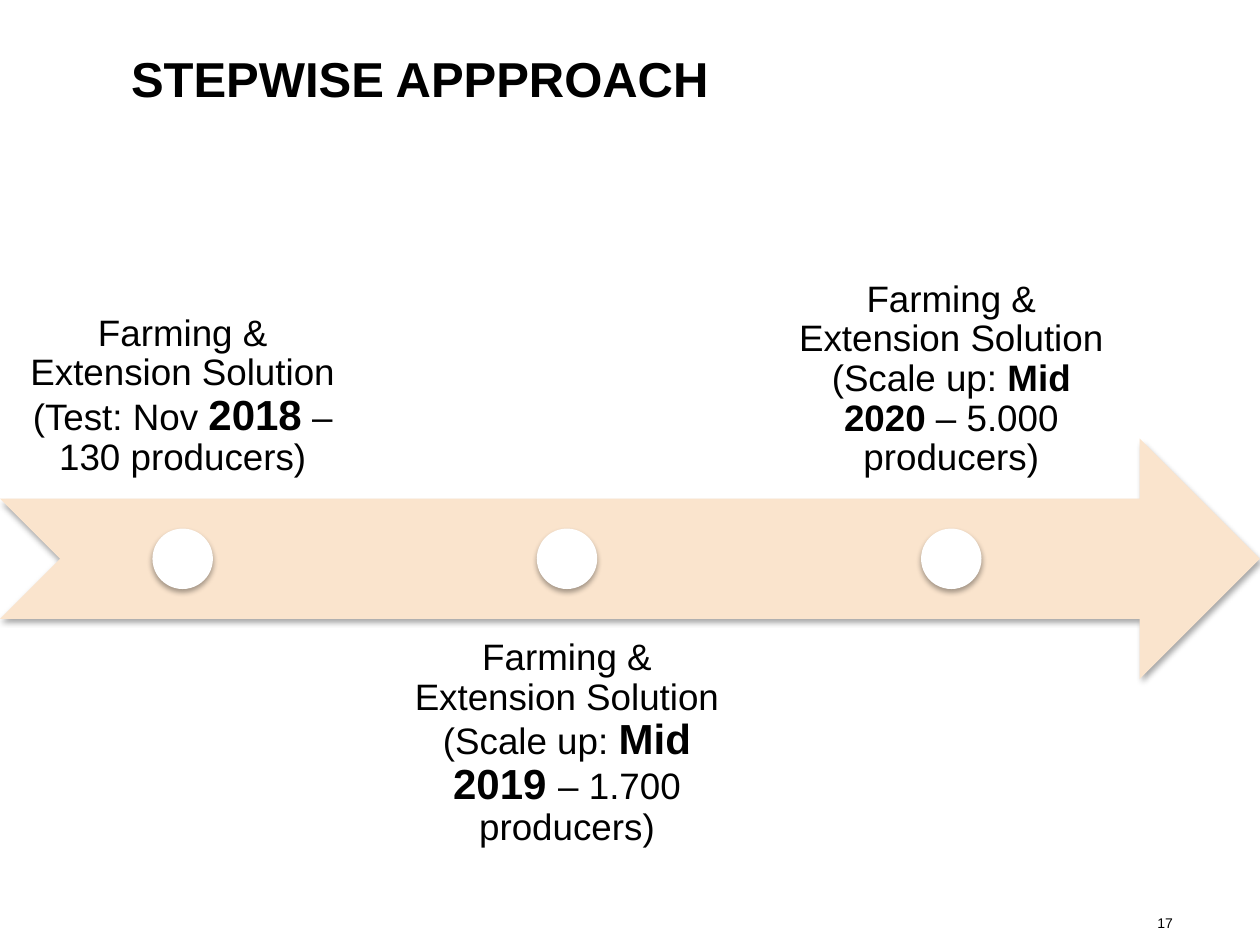
import pptx
import pptx.dml.color
import pptx.enum.shapes
import pptx.enum.text
import pptx.oxml
import pptx.oxml.ns
import pptx.util

Inches = pptx.util.Inches
Pt = pptx.util.Pt
ALIGN = pptx.enum.text.PP_ALIGN
ANCHOR = pptx.enum.text.MSO_ANCHOR
SHAPE = pptx.enum.shapes.MSO_SHAPE

SHADOW = (
    f'<a:effectLst {pptx.oxml.ns.nsdecls("a")}>'
    '<a:outerShdw blurRad="40000" dist="23000" dir="5400000" rotWithShape="0">'
    '<a:srgbClr val="000000"><a:alpha val="35000"/></a:srgbClr>'
    '</a:outerShdw></a:effectLst>'
)


def color(hex_string):
    return pptx.dml.color.RGBColor.from_string(hex_string)


class SlideBuilder:
    """Holds the style and the current slide."""

    font_name = "Arial"
    text_color = "000000"

    def __init__(self, presentation):
        self.slide = presentation.slides.add_slide(presentation.slide_layouts[5])
        self.shapes = self.slide.shapes

    def start_group(self):
        self.shapes = self.slide.shapes.add_group_shape().shapes

    def fill_text(self, shape, runs, align, anchor, insets, line_spacing=1.0):
        """Write one paragraph from (text, size, bold) runs."""
        frame = shape.text_frame
        frame_format = {
            "word_wrap": True,
            "auto_size": pptx.enum.text.MSO_AUTO_SIZE.NONE,
            "vertical_anchor": anchor,
        }
        sides = ("margin_left", "margin_top", "margin_right", "margin_bottom")
        frame_format.update(zip(sides, map(Inches, insets)))
        for name, value in frame_format.items():
            setattr(frame, name, value)

        paragraph = frame.paragraphs[0]
        paragraph.alignment = align
        paragraph.line_spacing = line_spacing
        for text, size, bold in runs:
            run = paragraph.add_run()
            run.text = text
            font_format = {"name": self.font_name, "size": Pt(size), "bold": bold}
            for name, value in font_format.items():
                setattr(run.font, name, value)
            run.font.color.rgb = color(self.text_color)
        return paragraph

    def title(self, text, left, top, width, height):
        shape = self.slide.shapes.title
        position = {"left": left, "top": top, "width": width, "height": height}
        for name, value in position.items():
            setattr(shape, name, Inches(value))
        paragraph = self.fill_text(shape, [(text, 28, True)], ALIGN.LEFT,
                                   ANCHOR.MIDDLE, (1.34, 0, 0.2, 0), 0.8)
        properties = paragraph._p.get_or_add_pPr()
        for name, value in {"marL": 0.72, "indent": -0.38}.items():
            properties.set(name, str(Inches(value)))

    def text(self, runs, left, top, width, height, **text_format):
        box = self.shapes.add_textbox(*map(Inches, (left, top, width, height)))
        self.fill_text(box, runs, **text_format)

    def shadowed_shape(self, kind, fill, left, top, width, height):
        shape = self.shapes.add_shape(kind, *map(Inches, (left, top, width, height)))
        shape.fill.solid()
        shape.fill.fore_color.rgb = color(fill)
        shape.line.fill.background()
        shape.shadow.inherit = False
        properties = shape._element.spPr
        properties.replace(properties.find(pptx.oxml.ns.qn("a:effectLst")),
                           pptx.oxml.parse_xml(SHADOW))


def main():
    presentation = pptx.Presentation()
    presentation.slide_width = Inches(10)
    presentation.slide_height = Inches(7.5)
    builder = SlideBuilder(presentation)

    # Title and page number
    builder.title("STEPWISE APPPROACH", -0.64, 0, 10.64, 1.33)
    builder.text([("17", 8, False)], 8.87, 7.2, 0.44, 0.25,
                 align=ALIGN.RIGHT, anchor=ANCHOR.MIDDLE, insets=(0, 0, 0, 0))

    # Timeline arrow
    builder.start_group()
    arrow_top, arrow_height = 3.48, 1.91
    builder.shadowed_shape(SHAPE.NOTCHED_RIGHT_ARROW, "FAE4CD",
                           0, arrow_top, 10, arrow_height)

    # Milestones, with labels alternately above and below the arrow
    step, label_width, dot = 3.05, 2.9, 0.48
    dot_top = arrow_top + (arrow_height - dot) / 2
    milestones = [
        ("Test: Nov ", "2018", " – 130 producers)", 24),
        ("Scale up: ", "Mid 2019 ", "– 1.700 producers)", 24),
        ("Scale up: ", "Mid 2020 ", "– 5.000 producers)", 21),
    ]
    for index, (phase, date, reach, date_size) in enumerate(milestones):
        left = index * step
        above = index % 2 == 0
        runs = [
            ("Farming & Extension Solution (" + phase, 21, False),
            (date, date_size, True),
            (reach, 21, False),
        ]
        builder.text(runs, left, 2.05 if above else 4.91, label_width, arrow_height,
                     align=ALIGN.CENTER,
                     anchor=ANCHOR.BOTTOM if above else ANCHOR.TOP,
                     insets=(0.16,) * 4, line_spacing=0.9)
        builder.shadowed_shape(SHAPE.OVAL, "FFFFFF",
                               left + (label_width - dot) / 2, dot_top, dot, dot)

    presentation.save("out.pptx")


if __name__ == "__main__":
    main()
